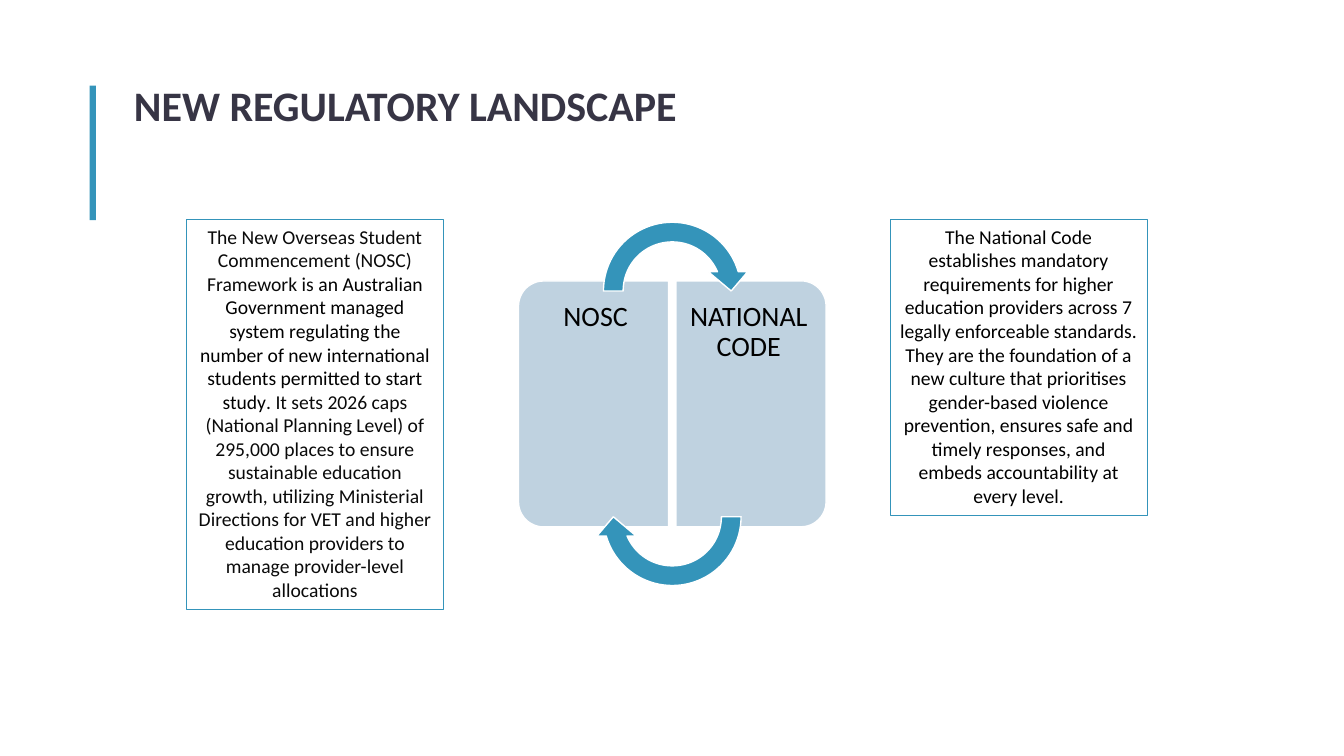
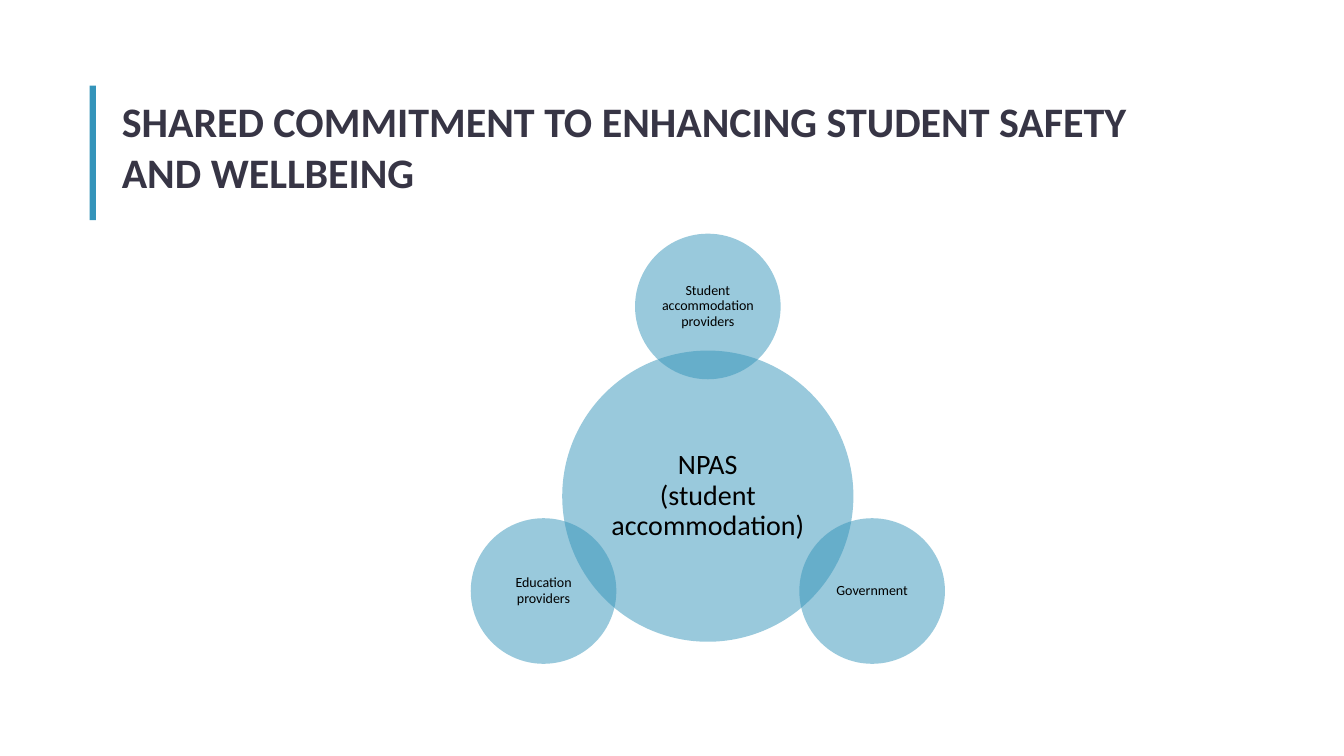
from dataclasses import dataclass
from math import cos, radians, sin

from lxml.etree import SubElement
from pptx import Presentation
from pptx.dml.color import RGBColor
from pptx.enum.shapes import MSO_SHAPE as Preset
from pptx.enum.text import MSO_ANCHOR as Anchor, MSO_AUTO_SIZE as AutoSize, PP_ALIGN as Align
from pptx.oxml.ns import qn
from pptx.util import Pt


@dataclass(frozen=True)
class Theme:
    font: str = "Calibri"
    accent: str = "3494BA"
    panel: str = "BFD2E0"
    heading: str = "373545"
    white: str = "FFFFFF"
    black: str = "000000"
    soft_black: str = "0A0A0A"
    title_size: int = 30
    label_size: int = 20
    body_size: int = 14
    small_size: int = 10


THEME = Theme()


class Deck:
    def __init__(self, theme):
        self.theme = theme
        self.presentation = Presentation()
        self.presentation.slide_width, self.presentation.slide_height = Pt(960), Pt(540)
        self.slide = None

    def add_slide(self, title, left, top, width, height):
        """Start a slide with the accent bar and a title in the given box."""
        self.slide = self.presentation.slides.add_slide(self.presentation.slide_layouts[6])
        self.shape(Preset.RECTANGLE, 64, 61.2, 4.5, 96, fill=self.theme.accent)
        box = self.text_box(left, top, width, height)
        self.put_text(box, title, self.theme.title_size, color=self.theme.heading,
                      align=Align.LEFT, bold=True, grow=True)

    def shape(self, preset, left, top, width, height, fill=None, line=None,
              line_width=1, alpha=None, rotation=0, adjustments=()):
        shape = self.slide.shapes.add_shape(preset, Pt(left), Pt(top), Pt(width), Pt(height))
        shape.shadow.inherit = False
        shape.rotation = rotation
        for index, value in enumerate(adjustments):
            shape.adjustments[index] = value
        if fill:
            shape.fill.solid()
            shape.fill.fore_color.rgb = RGBColor.from_string(fill)
        else:
            shape.fill.background()
        if alpha is not None:
            color = shape.element.spPr.find(qn("a:solidFill"))[0]
            SubElement(color, qn("a:alpha")).set("val", str(alpha * 1000))
        if line:
            shape.line.color.rgb = RGBColor.from_string(line)
            shape.line.width = Pt(line_width)
        else:
            shape.line.fill.background()
        return shape

    def centred_shape(self, preset, x, y, width, height, **style):
        return self.shape(preset, x - width / 2, y - height / 2, width, height, **style)

    def text_box(self, left, top, width, height):
        return self.slide.shapes.add_textbox(Pt(left), Pt(top), Pt(width), Pt(height))

    def format_run(self, run, size, color, bold=False):
        run.font.name = self.theme.font
        run.font.size = Pt(size)
        run.font.bold = bold
        run.font.color.rgb = RGBColor.from_string(color)

    def put_text(self, shape, text, size, color=THEME.black, align=Align.CENTER,
                 anchor=Anchor.TOP, bold=False, grow=False, spacing=None,
                 insets=(7.2, 3.6, 7.2, 3.6)):
        """Fill a shape with one formatted paragraph and return it."""
        frame = shape.text_frame
        frame.word_wrap = True
        frame.auto_size = AutoSize.SHAPE_TO_FIT_TEXT if grow else AutoSize.NONE
        frame.vertical_anchor = anchor
        (frame.margin_left, frame.margin_top,
         frame.margin_right, frame.margin_bottom) = map(Pt, insets)
        paragraph = frame.paragraphs[0]
        paragraph.text = text
        paragraph.alignment = align
        if spacing:
            paragraph.line_spacing = spacing
        for run in paragraph.runs:
            self.format_run(run, size, color, bold)
        return paragraph

    def note(self, left, height, parts):
        """Draw an outlined box holding (text, colour) parts in one paragraph."""
        box = self.shape(Preset.RECTANGLE, left, 157, 183.6, height,
                         line=self.theme.accent, line_width=0.75)
        (first_text, first_color), *others = parts
        size = self.theme.body_size
        paragraph = self.put_text(box, first_text, size, color=first_color, grow=True)
        for text, color in others:
            run = paragraph.add_run()
            run.text = text
            self.format_run(run, size, color)

    def panel(self, x, y, rotation, label, text_x, insets):
        """Draw a half panel, rounded on its outer side, with a label at its top."""
        self.centred_shape(Preset.ROUND_2_SAME_RECTANGLE, x, y, 175.7, 107.3,
                           fill=self.theme.panel, line=self.theme.white,
                           rotation=rotation, adjustments=(0.167, 0))
        box = self.text_box(text_x - 51, y - 82.5, 102, 165)
        self.put_text(box, label, self.theme.label_size, spacing=0.9, insets=insets)

    def cycle_arrow(self, x, y, rotation):
        self.centred_shape(Preset.CIRCULAR_ARROW, x, y, 112.3, 112.3,
                           fill=self.theme.accent, line=self.theme.white, rotation=rotation,
                           adjustments=(0.125, 11.423, 204.577, 108, 0.125))

    def circle(self, x, y, diameter, label, size, inset):
        circle = self.centred_shape(Preset.OVAL, x, y, diameter, diameter,
                                    fill=self.theme.accent, alpha=50)
        self.put_text(circle, label, size, anchor=Anchor.MIDDLE,
                      spacing=0.9, insets=(inset,) * 4)


def build_landscape(deck):
    deck.add_slide("NEW REGULATORY LANDSCAPE", 88.6, 53.3, 606, 44)
    x, y = 480.2, 288.5
    deck.panel(x - 56.2, y, 270, "NOSC", x - 53.3, (5.8, 10, 8.6, 10))
    deck.panel(x + 56.2, y, 90, "NATIONAL CODE", x + 53.3, (8.6, 10, 5.8, 10))
    deck.cycle_arrow(x, y - 80.6, 0)
    deck.cycle_arrow(x, y + 80.6, 180)
    deck.note(133.2, 278.6, [
        ("The New Overseas Student Commencement (NOSC) Framework is ", THEME.soft_black),
        ("an Australian Government managed system regulating the number of new "
         "international students permitted to start study", THEME.black),
        (". It sets 2026 caps (National Planning Level) of 295,000 places to ensure "
         "sustainable education growth, utilizing Ministerial Directions for VET and "
         "higher education providers to manage provider-level allocations",
         THEME.soft_black),
    ])
    deck.note(635.8, 211, [
        ("The National Code establishes mandatory requirements for "
         "higher education providers across 7 legally enforceable standards. "
         "They are the foundation of a new culture that prioritises gender-based "
         "violence prevention, ensures safe and timely responses, and embeds "
         "accountability at every level.", THEME.black),
    ])


def build_commitment(deck):
    deck.add_slide("SHARED COMMITMENT TO ENHANCING STUDENT SAFETY AND WELLBEING",
                   79.9, 64.8, 758, 80)
    x, y, orbit = 505.6, 354.4, 135.5
    deck.circle(x, y, 208, "NPAS\v(student accommodation)", THEME.label_size, 2.2)
    partners = ("Student accommodation providers", "Government", "Education providers")
    for index, partner in enumerate(partners):
        angle = radians(index * 360 / len(partners) - 90)
        deck.circle(x + orbit * cos(angle), y + orbit * sin(angle), 104,
                    partner, THEME.small_size, 0.9)


def main():
    deck = Deck(THEME)
    build_landscape(deck)
    build_commitment(deck)
    deck.presentation.save("out.pptx")


if __name__ == "__main__":
    main()
